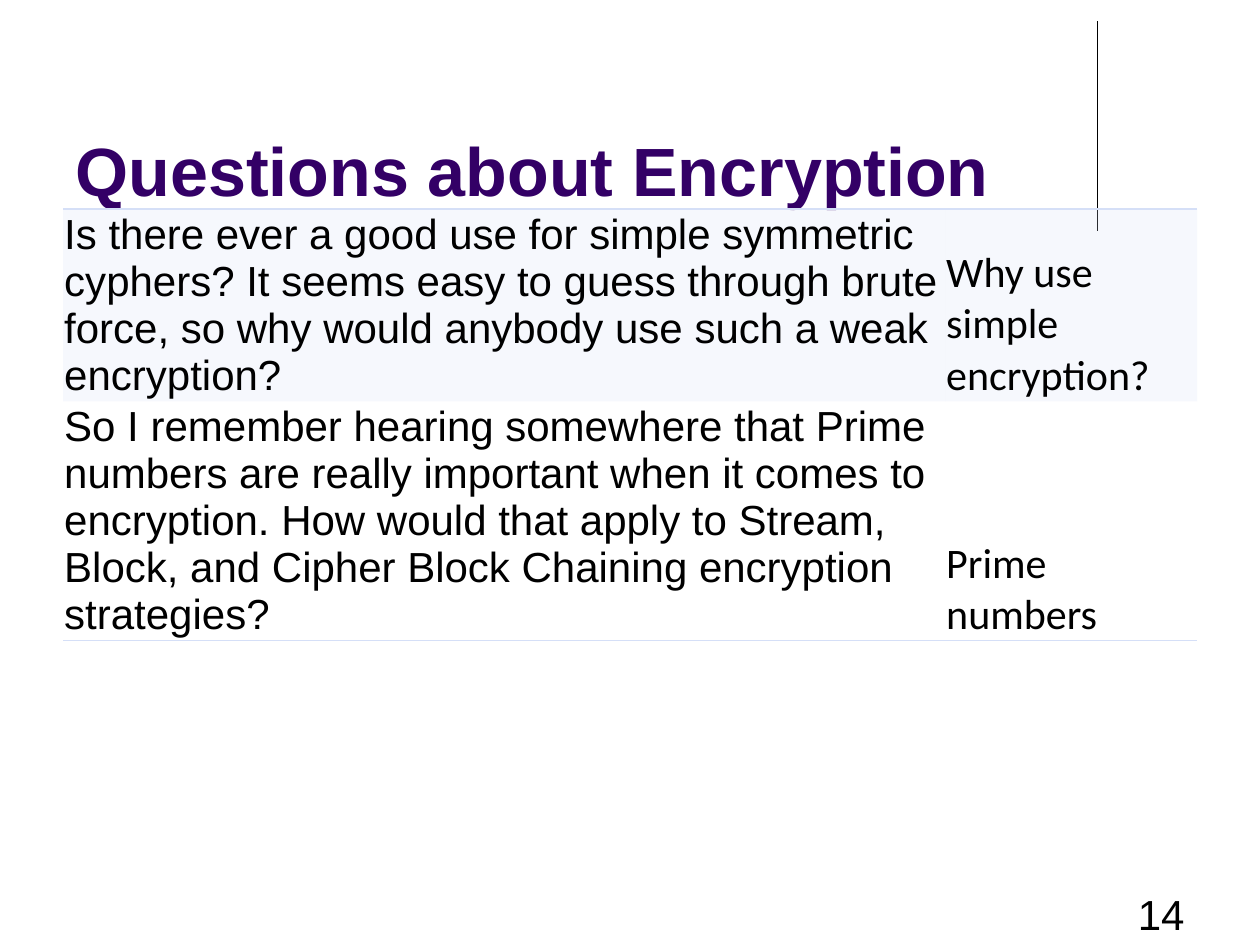
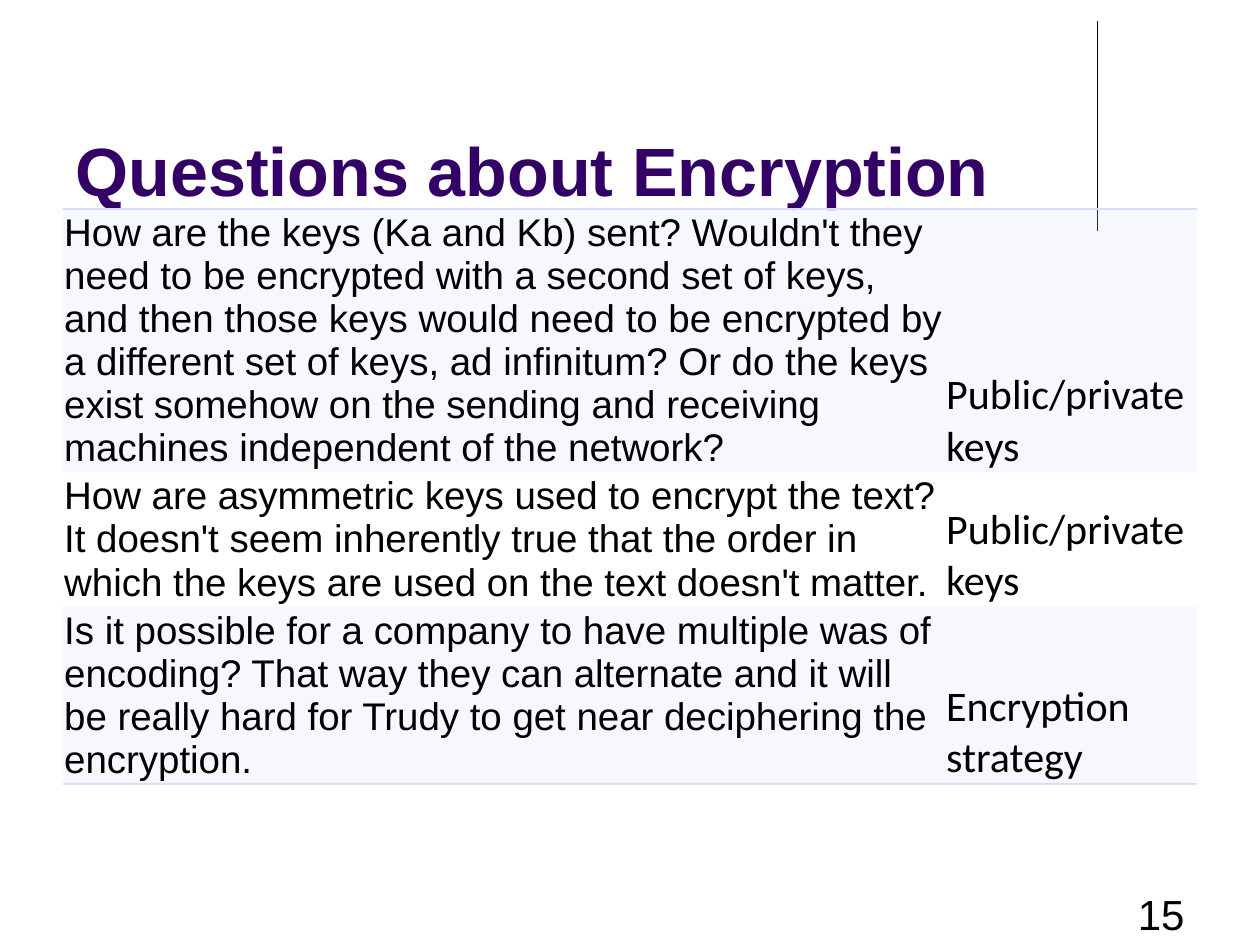
from lxml import etree
from pptx import Presentation
from pptx import util as u
from pptx.dml.color import RGBColor
from pptx.enum import shapes, text
from pptx.oxml.ns import qn

PX = 9144
BLACK = RGBColor(0x00, 0x00, 0x00)
PURPLE = RGBColor(0x33, 0x00, 0x66)
PALE_BLUE = RGBColor(0xD5, 0xDF, 0xF7)
NO_STYLE = "{2D5ABB26-0587-4C30-8999-92F81FD0307C}"
TITLE_BOX = (50, 30, 825, 142)
NUMBER_BOX = (717, 700, 233, 50)
TABLE_LEFT, TABLE_TOP, COLUMNS = 50, 166, (700, 200)
TITLE = "Questions about Encryption"

SLIDES = [
    (14, 24, [
        (152, "Is there ever a good use for simple symmetric cyphers? It seems easy to guess "
              "through brute force, so why would anybody use such a weak encryption?",
         "Why use simple encryption?"),
        (189, "So I remember hearing somewhere that Prime numbers are really important when it "
              "comes to encryption. How would that apply to Stream, Block, and Cipher Block "
              "Chaining encryption strategies?",
         "Prime numbers"),
    ]),
    (15, 22, [
        (209, "How are the keys (Ka and Kb) sent? Wouldn't they need to be encrypted with a "
              "second set of keys, and then those keys would need to be encrypted by a different "
              "set of keys, ad infinitum? Or do the keys exist somehow on the sending and "
              "receiving machines independent of the network?",
         "Public/private keys"),
        (106, "How are asymmetric keys used to encrypt the text? It doesn't seem inherently true "
              "that the order in which the keys are used on the text doesn't matter.",
         "Public/private keys"),
        (139, "Is it possible for a company to have multiple was of encoding? That way they can "
              "alternate and it will be really hard for Trudy to get near deciphering the "
              "encryption.",
         "Encryption strategy"),
    ]),
]


def emu(*lengths):
    """Turn px lengths into EMU."""
    return [u.Emu(n * PX) for n in lengths]


def style(p, name, size, color=BLACK, bold=False):
    """Format the runs of a paragraph."""
    for r in p.runs:
        r.font.name, r.font.size, r.font.bold = name, u.Pt(size), bold
        r.font.color.rgb = color


def add_rule(s, x, top, bottom):
    """Draw the thin vertical rule at the upper right."""
    line = s.shapes.add_connector(shapes.MSO_CONNECTOR.STRAIGHT, *emu(x, top, x, bottom))
    line.line.color.rgb, line.line.width = BLACK, u.Pt(0.75)
    etree.SubElement(line._element.spPr, qn("a:effectLst"))


def set_title(s, box):
    """Place and format the title placeholder."""
    sp = s.shapes.title
    sp.left, sp.top, sp.width, sp.height = emu(*box)
    tf = sp.text_frame
    tf.text = TITLE
    tf.auto_size = text.MSO_AUTO_SIZE.NONE
    tf.vertical_anchor = text.MSO_ANCHOR.BOTTOM
    p = tf.paragraphs[0]
    p.alignment = text.PP_ALIGN.LEFT
    style(p, "Arial", 39, PURPLE, True)


def add_border(cell, side):
    """Add a pale blue border to one side of a cell."""
    ln = etree.SubElement(cell._tc.get_or_add_tcPr(), qn(f"a:{side}"), w=str(u.Pt(1)))
    fill = etree.SubElement(ln, qn("a:solidFill"))
    etree.SubElement(fill, qn("a:srgbClr"), val=str(PALE_BLUE))


def fill_band(cell):
    """Tint a cell with translucent pale blue."""
    cell.fill.solid()
    cell.fill.fore_color.rgb = PALE_BLUE
    color = cell._tc.tcPr.find(qn("a:solidFill")).find(qn("a:srgbClr"))
    etree.SubElement(color, qn("a:alpha"), val="20000")


def format_cell(cell, content, font, size, margins):
    """Write one cell, anchored at the bottom."""
    cell.text = content
    cell.vertical_anchor = text.MSO_ANCHOR.BOTTOM
    cell.margin_left, cell.margin_top, cell.margin_right, cell.margin_bottom = emu(*margins)
    style(cell.text_frame.paragraphs[0], font, size)


def add_questions(s, left, top, rows, size):
    """Build the table of questions and their topics."""
    box = emu(left, top, sum(COLUMNS), sum(row[0] for row in rows))
    table = s.shapes.add_table(len(rows), len(COLUMNS), *box).table
    table.first_row = table.horz_banding = False
    table._tbl.tblPr.find(qn("a:tableStyleId")).text = NO_STYLE
    for column, width in zip(table.columns, emu(*COLUMNS)):
        column.width = width
    for i, (height, question, topic) in enumerate(rows):
        table.rows[i].height = emu(height)[0]
        format_cell(table.cell(i, 0), question, "Arial", size, (1, 2, 1, 2))
        format_cell(table.cell(i, 1), topic, "Calibri", 24, (1, 1, 1, 0))
        for cell in table.rows[i].cells:
            if i == 0:
                add_border(cell, "lnT")
            if i == len(rows) - 1:
                add_border(cell, "lnB")
            if i % 2 == 0:
                fill_band(cell)


def add_number(s, box, number):
    """Write the slide number at the lower right."""
    tf = s.shapes.add_textbox(*emu(*box)).text_frame
    tf.word_wrap = True
    tf.text = str(number)
    p = tf.paragraphs[0]
    p.alignment = text.PP_ALIGN.RIGHT
    style(p, "Arial", 24)


def add_question_slide(prs, number, size, rows):
    """Add a slide with a title, a question table and a number."""
    s = prs.slides.add_slide(prs.slide_layouts[5])
    add_rule(s, 871, 17, 183)
    set_title(s, TITLE_BOX)
    add_questions(s, TABLE_LEFT, TABLE_TOP, rows, size)
    add_number(s, NUMBER_BOX, number)


def main():
    """Build the deck and save it."""
    prs = Presentation()
    prs.slide_width, prs.slide_height = emu(1000, 750)
    for number, size, rows in SLIDES:
        add_question_slide(prs, number, size, rows)
    prs.save("out.pptx")


if __name__ == "__main__":
    main()
